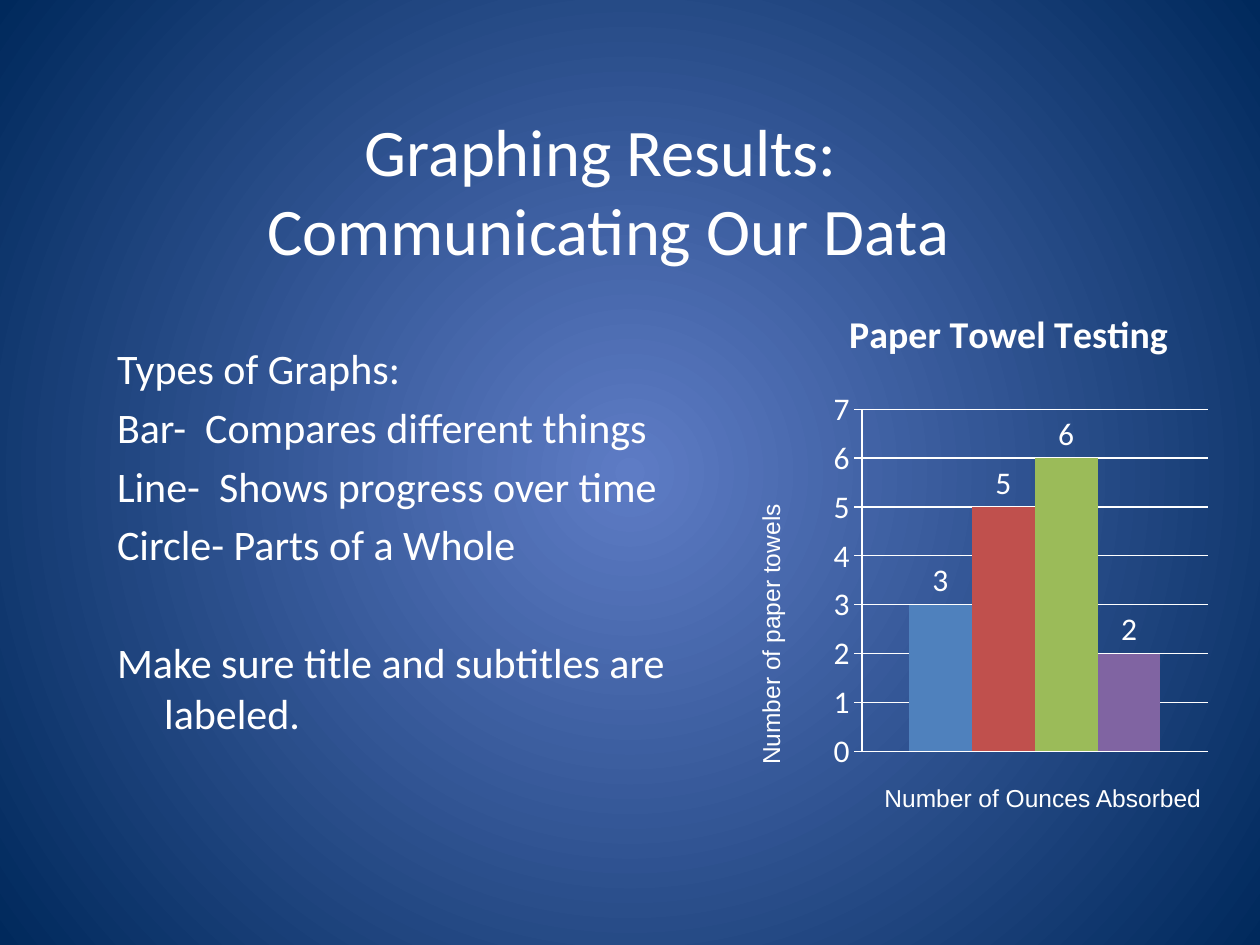
from dataclasses import dataclass

from lxml import etree
from pptx import Presentation
from pptx import util as u
from pptx.chart import data as cd
from pptx.dml.color import RGBColor
from pptx.enum import chart as ch
from pptx.enum import text
from pptx.oxml import parse_xml
from pptx.oxml.ns import nsdecls, qn

WHITE = RGBColor(0xFF, 0xFF, 0xFF)
GLOW = RGBColor(0x5E, 0x7C, 0xC5)
NAVY = RGBColor(0x00, 0x29, 0x5C)
BLUE = RGBColor(0x4F, 0x81, 0xBD)
RED = RGBColor(0xC0, 0x50, 0x4D)
GREEN = RGBColor(0x9B, 0xBB, 0x59)
PURPLE = RGBColor(0x80, 0x64, 0xA2)


@dataclass
class TextBlock:
    lines: list[str]
    left: float
    top: float
    width: float
    height: float
    size: float
    font: str = "Calibri"
    align: text.PP_ALIGN = text.PP_ALIGN.LEFT
    anchor: text.MSO_ANCHOR = text.MSO_ANCHOR.TOP
    rotation: float = 0
    hanging: float = 0


@dataclass
class Bar:
    name: str
    value: int
    color: RGBColor


TITLE = TextBlock(["Graphing Results: \vCommunicating Our Data"], 1.47, 1.7, 21.59, 4.24, 38,
                  align=text.PP_ALIGN.CENTER, anchor=text.MSO_ANCHOR.MIDDLE)
BODY = TextBlock(["Types of Graphs:", "Bar-  Compares different things",
                  "Line-  Shows progress over time", "Circle- Parts of a Whole",
                  "Make sure title and subtitles are labeled."],
                 2.11, 6.78, 12.5, 10.8, 24, hanging=0.95)
AXIS_LABELS = [
    TextBlock(["Number of paper towels"], 11.73, 11.43, 7.62, 0.86, 14, "Arial", rotation=270),
    TextBlock(["Number of Ounces Absorbed"], 17.58, 15.67, 6.99, 0.86, 14, "Arial"),
]
BARS = [Bar("Series 1", 3, BLUE), Bar("Series 2", 5, RED),
        Bar("Series 3", 6, GREEN), Bar("Series 4", 2, PURPLE)]
PLOT_AREA = {"x": 0.149, "y": 0.249, "w": 0.802, "h": 0.679}


def paint_background(s) -> None:
    """Fill the slide with a circular gradient."""
    fill = s.background.fill
    fill.gradient()
    for stop, color in zip(fill.gradient_stops, (GLOW, NAVY)):
        stop.color.rgb = color
    grad = s.element.find(".//" + qn("a:gradFill"))
    grad.replace(grad.find(qn("a:lin")), parse_xml(
        f'<a:path {nsdecls("a")} path="circle">'
        '<a:fillToRect l="50000" t="50000" r="50000" b="50000"/></a:path>'))


def add_text(s, block: TextBlock):
    """Draw a text block and return its text frame."""
    sp = s.shapes.add_textbox(u.Cm(block.left), u.Cm(block.top),
                              u.Cm(block.width), u.Cm(block.height))
    sp.rotation = block.rotation
    tf = sp.text_frame
    tf.word_wrap = True
    tf.vertical_anchor = block.anchor
    for i, line in enumerate(block.lines):
        p = tf.add_paragraph() if i else tf.paragraphs[0]
        p.text = line
        p.alignment = block.align
        if i:
            p.space_before = u.Pt(4.8)
        if block.hanging:
            pPr = p._p.get_or_add_pPr()
            pPr.set("marL", str(u.Cm(block.hanging)))
            pPr.set("indent", str(-u.Cm(block.hanging)))
        for r in p.runs:
            style_font(r.font, block.size, block.font)
    return tf


def style_font(font, size: float, name: str = "Calibri", bold: bool = False) -> None:
    """Set a white font."""
    font.size = u.Pt(size)
    font.name = name
    font.bold = bold
    font.color.rgb = WHITE


def style_line(line) -> None:
    """Set a thin white line."""
    line.color.rgb = WHITE
    line.width = u.Pt(0.75)


def set_plot_layout(chart) -> None:
    """Fix the inner plot area as fractions of the chart."""
    area = chart._chartSpace.chart.plotArea
    for old in area.findall(qn("c:layout")):
        area.remove(old)
    layout = etree.Element(qn("c:layout"))
    manual = etree.SubElement(layout, qn("c:manualLayout"))
    settings = {"layoutTarget": "inner", "xMode": "edge", "yMode": "edge", **PLOT_AREA}
    for tag, value in settings.items():
        etree.SubElement(manual, qn(f"c:{tag}")).set("val", str(value))
    area.insert(0, layout)


def add_bar_chart(s, bars: list[Bar]) -> None:
    """Draw the paper towel chart."""
    data = cd.CategoryChartData()
    data.categories = ["1"]
    for bar in bars:
        data.add_series(bar.name, [bar.value])
    chart = s.shapes.add_chart(ch.XL_CHART_TYPE.COLUMN_CLUSTERED, u.Cm(16.08), u.Cm(5.72),
                               u.Cm(8.69), u.Cm(10.16), data).chart
    style_font(chart.font, 18)
    chart.has_legend = False
    chart.has_title = True
    tf = chart.chart_title.text_frame
    tf.text = "Paper Towel Testing "
    style_font(tf.paragraphs[0].runs[0].font, 21.6, bold=True)
    chart.chart_title.include_in_layout = False
    set_plot_layout(chart)

    chart.category_axis.visible = False
    axis = chart.value_axis
    axis.minimum_scale, axis.maximum_scale, axis.major_unit = 0, 7, 1
    axis.major_tick_mark = ch.XL_TICK_MARK.OUTSIDE
    axis.has_major_gridlines = True
    style_line(axis.major_gridlines.format.line)
    style_line(axis.format.line)

    plot = chart.plots[0]
    plot.gap_width = 150
    plot.overlap = 0
    plot.vary_by_categories = False
    for series, bar in zip(plot.series, bars):
        series.format.fill.solid()
        series.format.fill.fore_color.rgb = bar.color
        labels = series.data_labels
        labels.show_value = True
        labels.position = ch.XL_LABEL_POSITION.OUTSIDE_END
        style_font(labels.font, 18)


def main() -> None:
    """Build and save the slide."""
    prs = Presentation()
    prs.slide_width, prs.slide_height = u.Cm(25.4), u.Cm(19.05)
    s = prs.slides.add_slide(prs.slide_layouts[6])
    paint_background(s)
    add_text(s, TITLE)
    add_text(s, BODY).paragraphs[-1].space_before = u.Pt(38.5)
    add_bar_chart(s, BARS)
    for label in AXIS_LABELS:
        add_text(s, label)
    prs.save("out.pptx")


if __name__ == "__main__":
    main()
